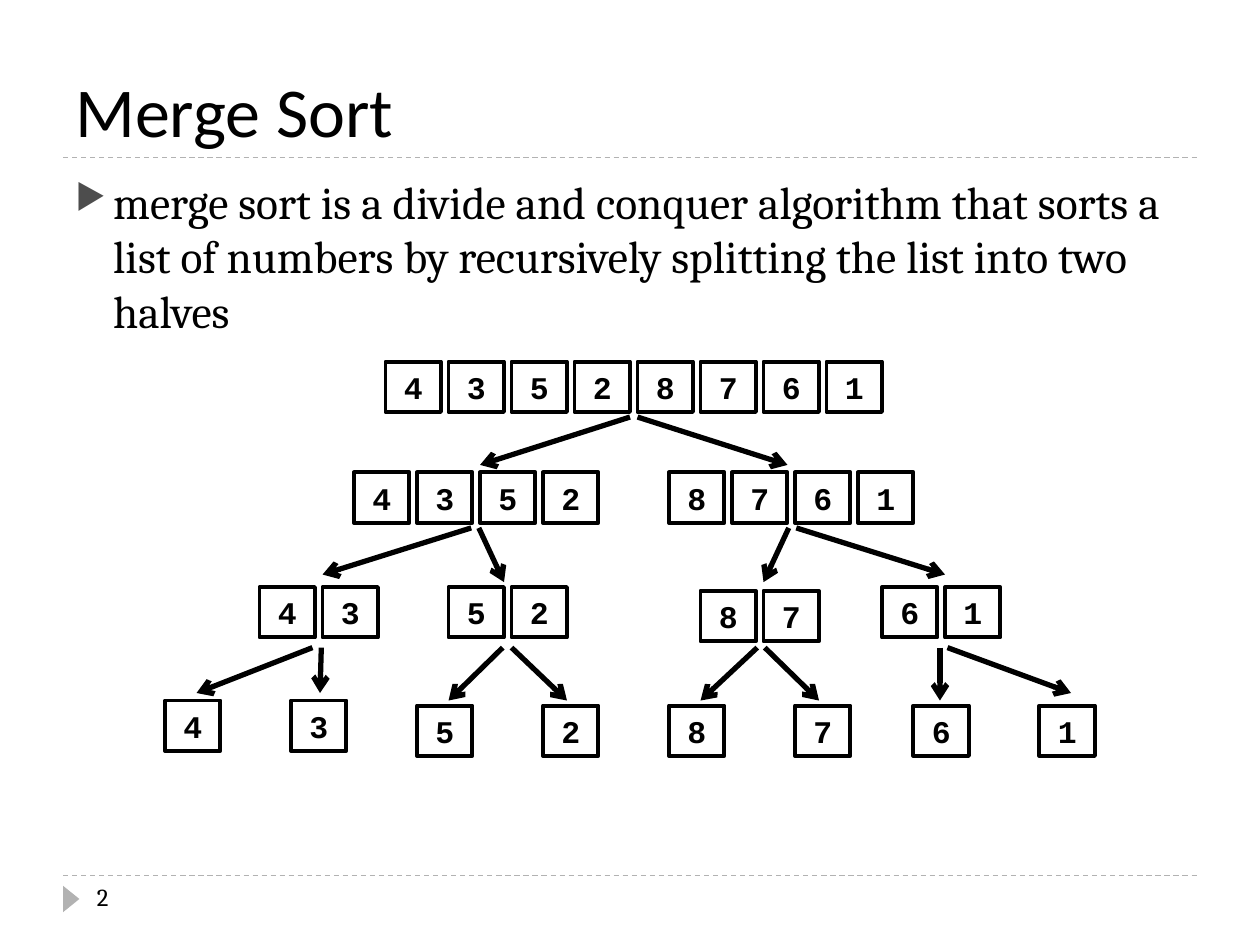
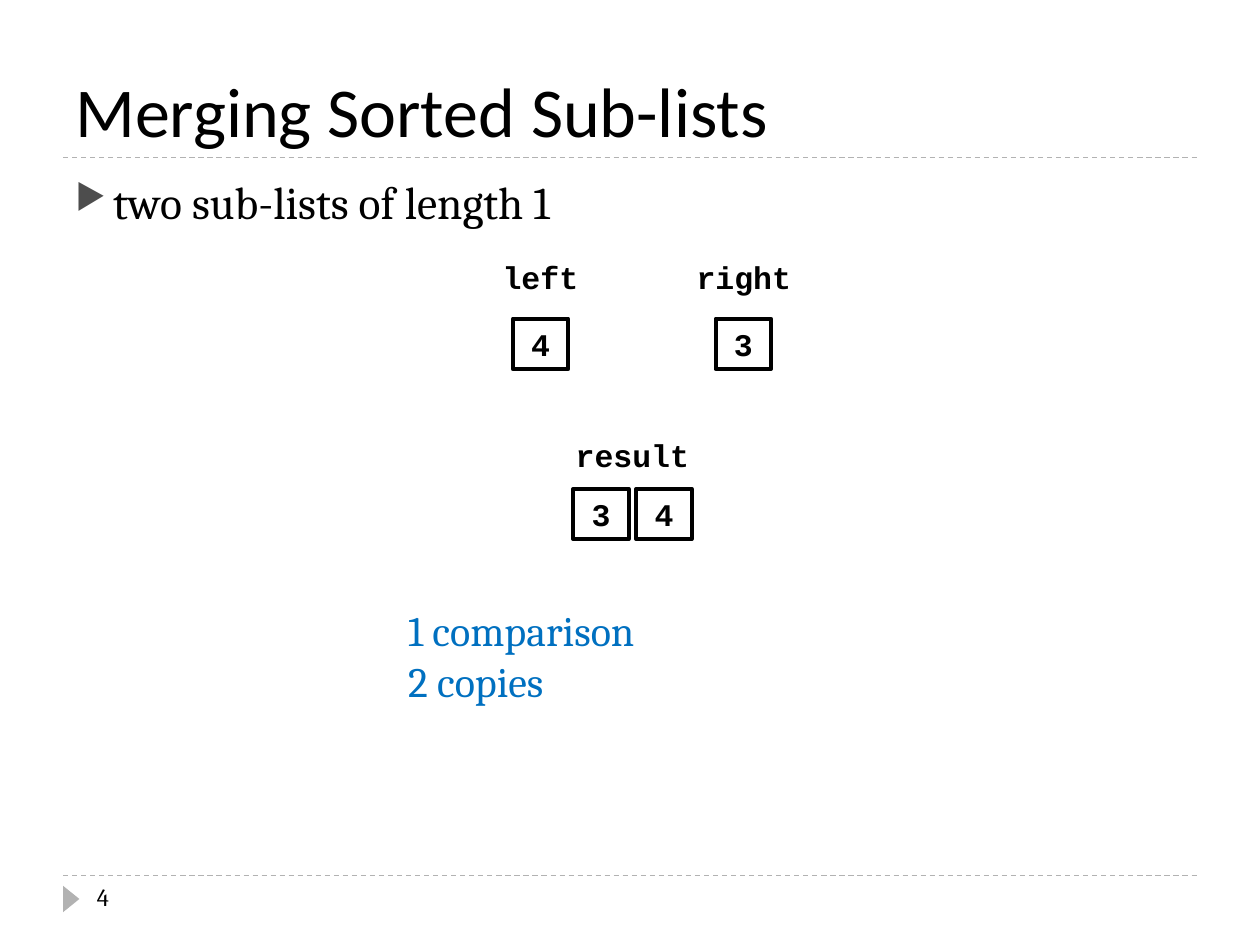
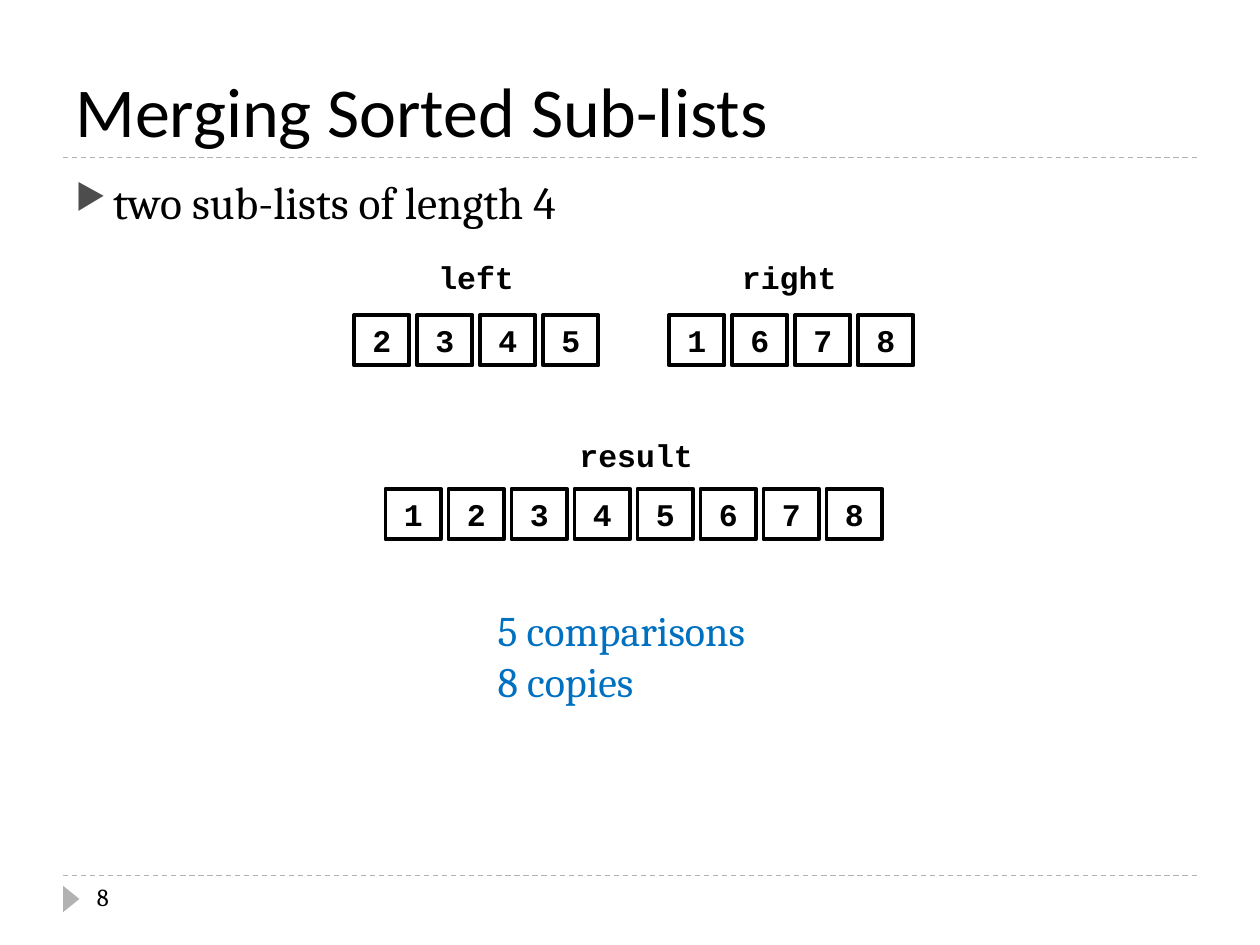
from lxml import etree
from pptx import Presentation
from pptx import util as u
from pptx.dml.color import RGBColor
from pptx.enum import dml, shapes, text
from pptx.oxml import ns

BLACK = RGBColor(0x00, 0x00, 0x00)
BLUE = RGBColor(0x00, 0x70, 0xC0)
RULE_GREY = RGBColor(0xB2, 0xB2, 0xB2)
BULLET_GREY = RGBColor(0x4D, 0x4D, 0x4D)
HEADING, BODY, CODE = "Calibri", "Cambria", "Courier New"
CELL_WIDTH, CELL_HEIGHT, CELL_STEP = 0.44, 0.4, 0.5


def add_xml(parent, tag, **attributes):
    return etree.SubElement(parent, ns.qn(tag), attributes)


class Deck:
    """Holds the shared style and the slide being built."""

    def __init__(self):
        self.prs = Presentation()
        self.prs.slide_width, self.prs.slide_height = u.Inches(10), u.Inches(7.5)
        self.slide = None

    def new_slide(self, title, statement, number):
        self.slide = self.prs.slides.add_slide(self.prs.slide_layouts[6])
        for rule_y in (6.95, 1.25):
            rule = self.line((0.5, rule_y), (9.5, rule_y), RULE_GREY, 0.75)
            rule.line.dash_style = dml.MSO_LINE.DASH
        self.page_marker()
        heading = self.words([title], 0.5, 0.17, 9, 1.08, HEADING, 40)
        heading.vertical_anchor = text.MSO_ANCHOR.BOTTOM
        self.bullet(statement)
        self.words([number], 0.67, 6.95, 2.17, 0.4, BODY, 14)

    def page_marker(self):
        marker = self.slide.shapes.add_shape(
            shapes.MSO_SHAPE.ISOSCELES_TRIANGLE,
            u.Inches(0.46), u.Inches(7.07), u.Inches(0.21), u.Inches(0.13))
        marker.rotation = 90
        marker.shadow.inherit = False
        marker.fill.solid()
        marker.fill.fore_color.rgb = RULE_GREY
        marker.line.fill.background()

    def format(self, frame, lines, font, size, color=BLACK, bold=False):
        frame.text = "\n".join(lines)
        for paragraph in frame.paragraphs:
            for run in paragraph.runs:
                run.font.name, run.font.size = font, u.Pt(size)
                run.font.color.rgb, run.font.bold = color, bold

    def words(self, lines, left, top, width, height, font, size,
              color=BLACK, bold=False, wrap=True):
        frame = self.slide.shapes.add_textbox(
            u.Inches(left), u.Inches(top), u.Inches(width), u.Inches(height)).text_frame
        frame.word_wrap = wrap
        self.format(frame, lines, font, size, color, bold)
        if not wrap:
            frame.auto_size = text.MSO_AUTO_SIZE.SHAPE_TO_FIT_TEXT
        return frame

    def bullet(self, statement):
        paragraph = self.words([statement], 0.5, 1.33, 9, 5.4, BODY, 26).paragraphs[0]
        paragraph.space_before = u.Pt(6)
        props = paragraph._p.get_or_add_pPr()
        props.set("marL", str(u.Inches(0.3)))
        props.set("indent", str(u.Inches(-0.3)))
        add_xml(add_xml(props, "a:buClr"), "a:srgbClr", val=str(BULLET_GREY))
        add_xml(props, "a:buSzPct", val="76000")
        add_xml(props, "a:buChar", char="▶")

    def line(self, start, end, color=BLACK, width=3):
        connector = self.slide.shapes.add_connector(
            shapes.MSO_CONNECTOR.STRAIGHT, *(u.Inches(v) for v in (*start, *end)))
        connector.line.color.rgb = color
        connector.line.width = u.Pt(width)
        add_xml(connector._element.spPr, "a:effectLst")
        return connector

    def arrow(self, start, end):
        shaft = self.line(start, end)
        add_xml(shaft.line._get_or_add_ln(), "a:tailEnd", type="arrow")

    def number_list(self, left, top, digits):
        for i, digit in enumerate(digits):
            cell = self.slide.shapes.add_shape(
                shapes.MSO_SHAPE.RECTANGLE, u.Inches(left + i * CELL_STEP),
                u.Inches(top), u.Inches(CELL_WIDTH), u.Inches(CELL_HEIGHT))
            cell.shadow.inherit = False
            cell.fill.background()
            cell.line.color.rgb, cell.line.width = BLACK, u.Pt(2.25)
            frame = cell.text_frame
            frame.word_wrap = False
            frame.vertical_anchor = text.MSO_ANCHOR.TOP
            self.format(frame, [digit], CODE, 18, bold=True)
            frame.paragraphs[0].alignment = text.PP_ALIGN.CENTER

    def label(self, name, left, top, width):
        self.words([name], left, top, width, 0.4, CODE, 18, bold=True, wrap=False)

    def cost(self, lines, left, width):
        self.words(lines, left, 4.75, width, 0.91, BODY, 24, BLUE, wrap=False)


# Each list: left, top, digits
SPLIT_LISTS = [
    (3.06, 2.87, "43528761"),
    (2.81, 3.75, "4352"), (5.31, 3.75, "8761"),
    (2.06, 4.66, "43"), (3.56, 4.66, "52"), (5.56, 4.69, "87"), (7, 4.66, "61"),
    (1.31, 5.56, "4"), (2.31, 5.56, "3"), (3.31, 5.6, "5"), (4.31, 5.6, "2"),
    (5.31, 5.6, "8"), (6.31, 5.6, "7"), (7.25, 5.6, "6"), (8.25, 5.6, "1"),
]

# Each level of splits: top of its arrows, then (start x, end x, end y)
SPLIT_ARROWS = [
    (3.31, [(5, 3.81, 3.69), (5.06, 6.25, 3.69)]),
    (4.19, [(3.74, 2.56, 4.56), (3.8, 4, 4.62),
            (6.26, 6.06, 4.62), (6.32, 7.5, 4.56)]),
    (5.14, [(2.48, 1.56, 5.5), (2.55, 2.54, 5.5), (3.99, 3.56, 5.56),
            (4.06, 4.5, 5.56), (6.01, 5.56, 5.56), (6.07, 6.5, 5.56),
            (7.46, 7.46, 5.56), (7.52, 8.5, 5.5)]),
]

# Each merge: length, page, lists, labels (name, left, top, width), cost
MERGES = [
    ("1", "4",
     [(4.07, 2.53, "4"), (5.68, 2.53, "3"), (4.55, 3.88, "34")],
     [("left", 3.89, 2, 0.81), ("right", 5.43, 2, 0.96), ("result", 4.47, 3.41, 1.11)],
     (["1 comparison", "2 copies"], 3.14, 2.09)),
    ("4", "8",
     [(2.81, 2.5, "2345"), (5.31, 2.5, "1678"), (3.06, 3.88, "12345678")],
     [("left", 3.38, 2, 0.81), ("right", 5.79, 2, 0.96), ("result", 4.5, 3.41, 1.11)],
     (["5 comparisons", "8 copies"], 3.85, 2.28)),
]


def main():
    deck = Deck()

    # Splitting tree
    deck.new_slide("Merge Sort",
                   "merge sort is a divide and conquer algorithm that sorts a list of "
                   "numbers by recursively splitting the list into two halves", "2")
    for split_list in SPLIT_LISTS:
        deck.number_list(*split_list)
    for start_y, arrows in SPLIT_ARROWS:
        for start_x, end_x, end_y in arrows:
            deck.arrow((start_x, start_y), (end_x, end_y))

    # Merging steps
    for length, page, lists, labels, cost in MERGES:
        deck.new_slide("Merging Sorted Sub-lists", f"two sub-lists of length {length}", page)
        for merge_list in lists:
            deck.number_list(*merge_list)
        for label in labels:
            deck.label(*label)
        deck.cost(*cost)

    deck.prs.save("out.pptx")


if __name__ == "__main__":
    main()
